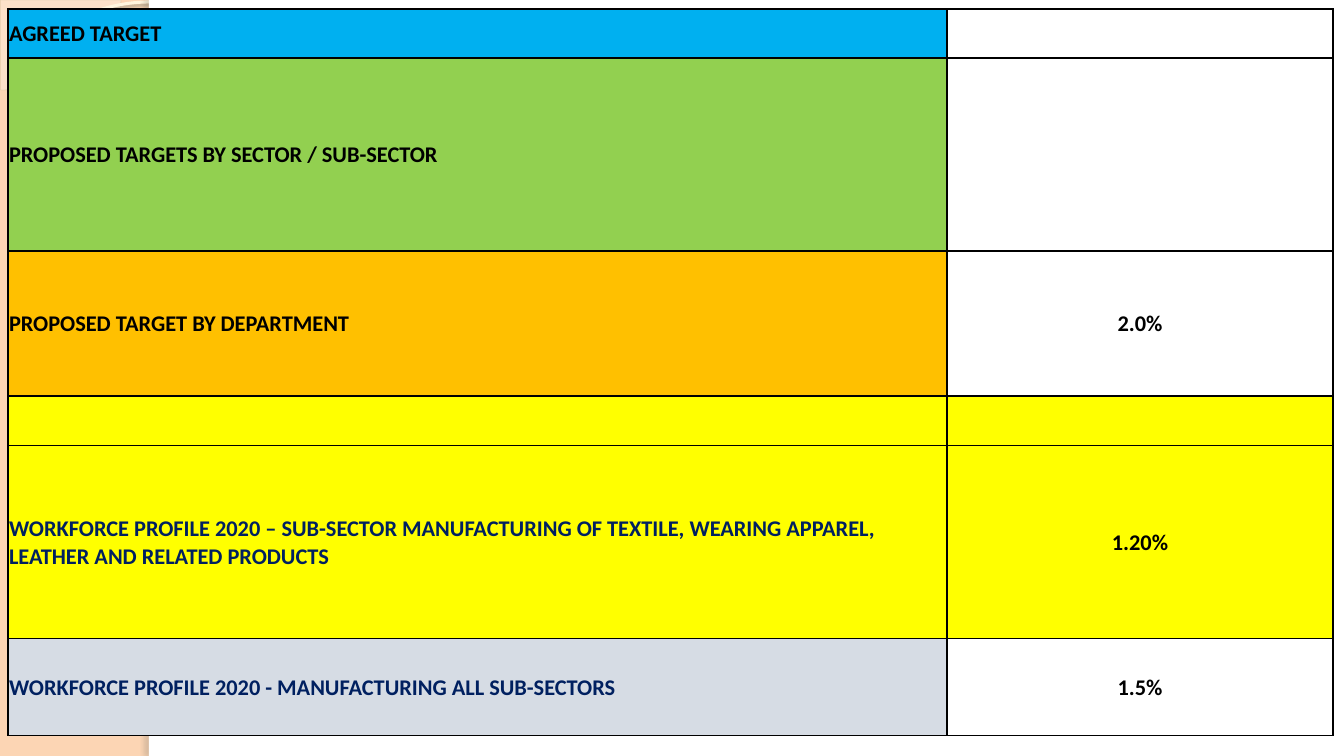
from dataclasses import dataclass

import lxml.etree
import pptx
import pptx.dml.color
import pptx.enum.shapes
import pptx.enum.text
import pptx.oxml.ns
import pptx.util

EMU_PER_PX = 914400 / 100.8
SLIDE_WIDTH, SLIDE_HEIGHT = 1344, 756
PANEL_LEFT = 149
TABLE_LEFT, TABLE_TOP = 8, 9
COLUMN_WIDTHS = (939, 386)

COLORS = {
    "peach": "FCD5B4",
    "cream": "FEFAF4",
    "tan": "D3C39F",
    "ring": "FFF5DE",
    "ring_shadow": "B0A68F",
    "panel_shadow": "736F63",
    "white": "FFFFFF",
    "black": "000000",
    "navy": "002060",
    "blue": "00B0F0",
    "green": "92D050",
    "orange": "FFC000",
    "yellow": "FFFF00",
    "gray": "D6DCE4",
}


@dataclass(frozen=True)
class TargetRow:
    height: int
    label: str
    value: str
    label_fill: str
    value_fill: str | None = None
    label_color: str = "black"


TARGET_ROWS = (
    TargetRow(49, "AGREED TARGET", "", "blue"),
    TargetRow(193, "PROPOSED TARGETS BY SECTOR / SUB-SECTOR", "", "green"),
    TargetRow(145, "PROPOSED TARGET BY DEPARTMENT", "2.0%", "orange"),
    TargetRow(50, "", "", "yellow", "yellow"),
    TargetRow(193, "WORKFORCE PROFILE 2020 – SUB-SECTOR MANUFACTURING OF TEXTILE, "
              "WEARING APPAREL, LEATHER AND RELATED PRODUCTS",
              "1.20%", "yellow", "yellow", "navy"),
    TargetRow(97, "WORKFORCE PROFILE 2020 - MANUFACTURING ALL SUB-SECTORS",
              "1.5%", "gray", None, "navy"),
)


def px(length: int) -> pptx.util.Emu:
    return pptx.util.Emu(round(length * EMU_PER_PX))


def rgb(name: str) -> pptx.dml.color.RGBColor:
    return pptx.dml.color.RGBColor.from_string(COLORS[name])


def add_child(parent, tag: str, **attributes):
    child = lxml.etree.SubElement(parent, pptx.oxml.ns.qn(tag))
    for name, value in attributes.items():
        child.set(name, str(value))
    return child


def add_decoration(slide, kind, left: int, top: int, width: int, height: int,
                   fill: str | None = None, line: str | None = None,
                   line_width: float = 1):
    shape = slide.shapes.add_shape(kind, px(left), px(top), px(width), px(height))
    shape.shadow.inherit = False
    if fill:
        shape.fill.solid()
        shape.fill.fore_color.rgb = rgb(fill)
    else:
        shape.fill.background()
    if line:
        shape.line.color.rgb = rgb(line)
        shape.line.width = pptx.util.Pt(line_width)
    else:
        shape.line.fill.background()
    return shape


def set_shadow(shape, color: str, opacity: int, size: float, degrees: int) -> None:
    """Give the shape an outer shadow with equal blur and distance in points."""
    effects = shape._element.spPr.find(pptx.oxml.ns.qn("a:effectLst"))
    length = pptx.util.Pt(size)
    shadow = add_child(effects, "a:outerShdw", blurRad=length, dist=length,
                       dir=degrees * 60000, algn="tl", rotWithShape=0)
    shadow_color = add_child(shadow, "a:srgbClr", val=COLORS[color])
    add_child(shadow_color, "a:alpha", val=opacity * 1000)


def add_backdrop(slide) -> None:
    slide.background.fill.solid()
    slide.background.fill.fore_color.rgb = rgb("peach")
    kinds = pptx.enum.shapes.MSO_SHAPE

    corner = add_decoration(slide, kinds.PIE, -120, -90, 241, 180,
                            "cream", "tan", 0.25)
    corner.adjustments[0] = 0
    corner.adjustments[1] = 54
    corner_color = corner._element.spPr.find(
        pptx.oxml.ns.qn("a:solidFill") + "/" + pptx.oxml.ns.qn("a:srgbClr"))
    add_child(corner_color, "a:alpha", val=33000)

    ring = add_decoration(slide, kinds.OVAL, 25, 2, 250, 187,
                          line="ring", line_width=2.15)
    set_shadow(ring, "ring_shadow", 85, 2, 90)

    panel = add_decoration(slide, kinds.RECTANGLE, PANEL_LEFT, 0,
                           SLIDE_WIDTH - PANEL_LEFT, SLIDE_HEIGHT, "white")
    set_shadow(panel, "panel_shadow", 25, 3, 180)


def set_borders(cell) -> None:
    properties = cell._tc.get_or_add_tcPr()
    for index, side in enumerate(("a:lnL", "a:lnR", "a:lnT", "a:lnB")):
        border = lxml.etree.Element(pptx.oxml.ns.qn(side), w=str(pptx.util.Pt(1)))
        add_child(add_child(border, "a:solidFill"), "a:srgbClr", val=COLORS["black"])
        properties.insert(index, border)


def format_cell(cell, text: str, fill: str | None, color: str, alignment) -> None:
    if fill:
        cell.fill.solid()
        cell.fill.fore_color.rgb = rgb(fill)
    else:
        cell.fill.background()
    set_borders(cell)
    if not text:
        return
    cell.vertical_anchor = pptx.enum.text.MSO_ANCHOR.MIDDLE
    cell.margin_left = cell.margin_right = cell.margin_top = px(1)
    cell.margin_bottom = 0
    paragraph = cell.text_frame.paragraphs[0]
    paragraph.alignment = alignment
    run = paragraph.add_run()
    run.text = text
    run.font.name = "Calibri"
    run.font.size = pptx.util.Pt(16)
    run.font.bold = True
    run.font.color.rgb = rgb(color)


def add_target_table(slide) -> None:
    table = slide.shapes.add_table(
        len(TARGET_ROWS), len(COLUMN_WIDTHS), px(TABLE_LEFT), px(TABLE_TOP),
        px(sum(COLUMN_WIDTHS)), px(sum(row.height for row in TARGET_ROWS))).table
    table.first_row = False
    table.horz_banding = False
    for column, width in zip(table.columns, COLUMN_WIDTHS):
        column.width = px(width)
    align = pptx.enum.text.PP_ALIGN
    for table_row, target in zip(table.rows, TARGET_ROWS):
        table_row.height = px(target.height)
        label_cell, value_cell = table_row.cells
        format_cell(label_cell, target.label, target.label_fill,
                    target.label_color, align.LEFT)
        format_cell(value_cell, target.value, target.value_fill,
                    "black", align.CENTER)


def main() -> None:
    presentation = pptx.Presentation()
    presentation.slide_width = px(SLIDE_WIDTH)
    presentation.slide_height = px(SLIDE_HEIGHT)
    blank_layout = presentation.slide_layouts[6]
    slide = presentation.slides.add_slide(blank_layout)
    add_backdrop(slide)
    add_target_table(slide)
    presentation.save("out.pptx")


if __name__ == "__main__":
    main()
